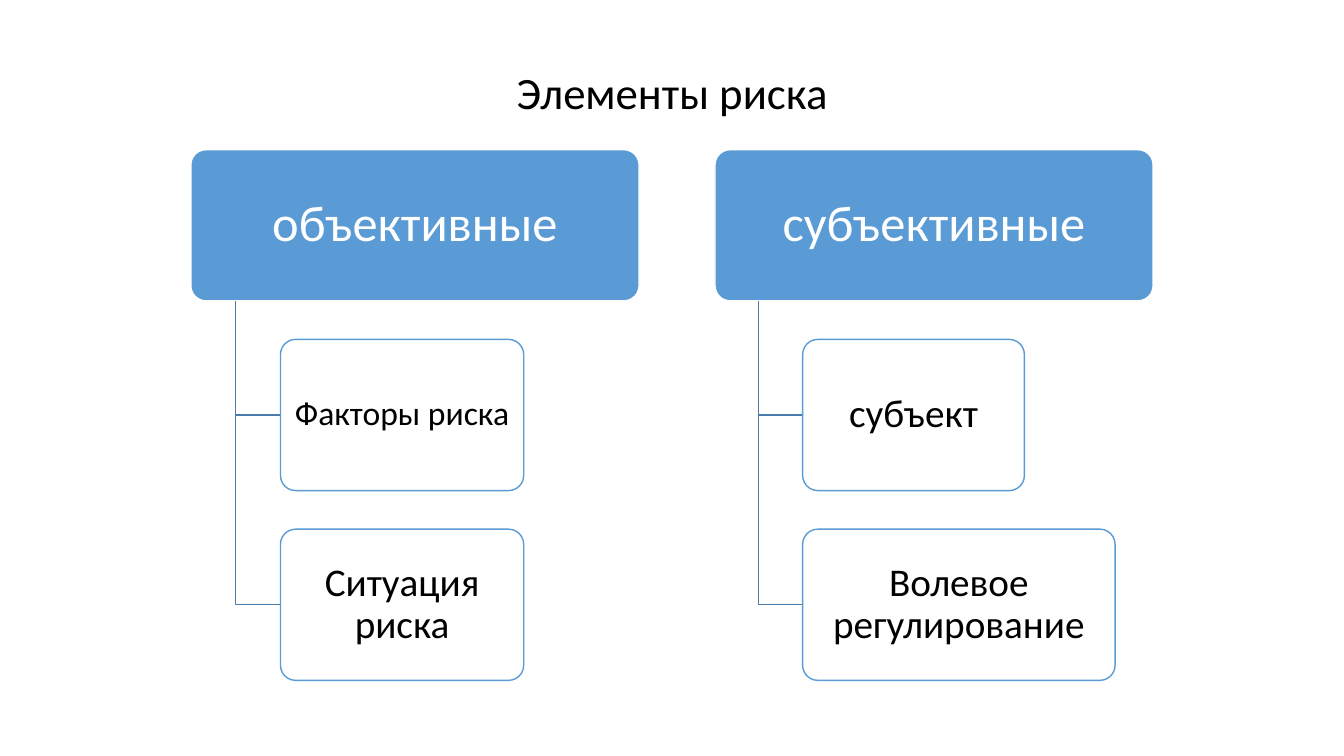
from lxml.etree import SubElement
from pptx import Presentation
from pptx.dml.color import RGBColor
from pptx.enum.shapes import MSO_SHAPE
from pptx.enum.text import MSO_ANCHOR, PP_ALIGN
from pptx.oxml.ns import qn
from pptx.util import Inches, Pt

SLIDE_WIDTH, SLIDE_HEIGHT = Inches(13.33), Inches(7.5)
BLUE, BRANCH_BLUE, WHITE, BLACK = "5B9BD5", "497CAB", "FFFFFF", "000000"

# Lengths are in percent of the slide: columns across, rows down.
TITLE_BOX = (6.9, 5.3, 86.25, 14.4)
HEAD_TOP, BOX_HEIGHT, ROW_STEP = 19.8, 20, 25.1
# Each tree: left, head width, head text, children as (text, width, size).
TREES = [
    (14.2, 33.35, "объективные",
     [("Факторы риска", 18.1, 24), ("Ситуация риска", 18.1, 28)]),
    (53.2, 32.6, "субъективные",
     [("субъект", 16.5, 28), ("Волевое регулирование", 23.25, 28)]),
]


def columns(share):
    return int(SLIDE_WIDTH * share / 100)


def rows(share):
    return int(SLIDE_HEIGHT * share / 100)


def color(value):
    return RGBColor.from_string(value)


def apply(target, values):
    for name, value in values.items():
        setattr(target, name, value)


def write_text(box, text, size, text_color, inset):
    frame = box.text_frame
    apply(frame, {
        "word_wrap": True, "vertical_anchor": MSO_ANCHOR.MIDDLE,
        "margin_left": Inches(inset), "margin_right": Inches(inset),
        "margin_top": Inches(inset - 0.02), "margin_bottom": Inches(inset - 0.02),
    })
    para = frame.paragraphs[0]
    apply(para, {"alignment": PP_ALIGN.CENTER, "line_spacing": 0.9})
    span = para.add_run()
    span.text = text
    apply(span.font, {"name": "Calibri", "size": Pt(size)})
    span.font.color.rgb = color(text_color)


def set_line(shape, line_color):
    shape.shadow.inherit = False
    shape.line.color.rgb = color(line_color)
    shape.line.width = Pt(1)


def add_card(page, left, top, width, fill, line_color):
    card = page.shapes.add_shape(
        MSO_SHAPE.ROUNDED_RECTANGLE,
        columns(left), rows(top), columns(width), rows(BOX_HEIGHT))
    card.adjustments[0] = 0.1
    card.fill.solid()
    card.fill.fore_color.rgb = color(fill)
    set_line(card, line_color)
    return card


def add_branch(page, trunk, top, child_left, child_middle):
    """Draw the elbow from a head's lower edge to a child's left side."""
    builder = page.shapes.build_freeform(columns(trunk), rows(top))
    builder.add_line_segments(
        [(columns(trunk), rows(child_middle)),
         (columns(child_left), rows(child_middle))], close=False)
    branch = builder.convert_to_shape()
    branch.fill.background()
    set_line(branch, BRANCH_BLUE)


def add_child(page, left, top, width, text, size):
    child = add_card(page, left, top, width, WHITE, BLUE)
    fill_color = child.fill._xPr.find(qn("a:solidFill"))[0]
    SubElement(fill_color, qn("a:alpha"), val="90000")
    write_text(child, text, size, BLACK, 0.05 if size < 28 else 0.06)


def add_tree(page, left, width, heading, children):
    head = add_card(page, left, HEAD_TOP, width, BLUE, WHITE)
    write_text(head, heading, 36, WHITE, 0.07)
    trunk, child_left = left + width / 10, left + width / 5
    for row, (text, child_width, size) in enumerate(children, start=1):
        top = HEAD_TOP + row * ROW_STEP
        add_branch(page, trunk, HEAD_TOP + BOX_HEIGHT, child_left, top + BOX_HEIGHT / 2)
        add_child(page, child_left, top, child_width, text, size)


def add_title(page, left, top, width, height):
    title = page.shapes.title
    apply(title, {"left": columns(left), "top": rows(top),
                  "width": columns(width), "height": rows(height)})
    write_text(title, "Элементы риска", 32, BLACK, 0.1)


def main():
    deck = Presentation()
    apply(deck, {"slide_width": SLIDE_WIDTH, "slide_height": SLIDE_HEIGHT})
    page = deck.slides.add_slide(deck.slide_layouts.get_by_name("Title Only"))
    add_title(page, *TITLE_BOX)
    for tree in TREES:
        add_tree(page, *tree)
    deck.save("out.pptx")


if __name__ == "__main__":
    main()
